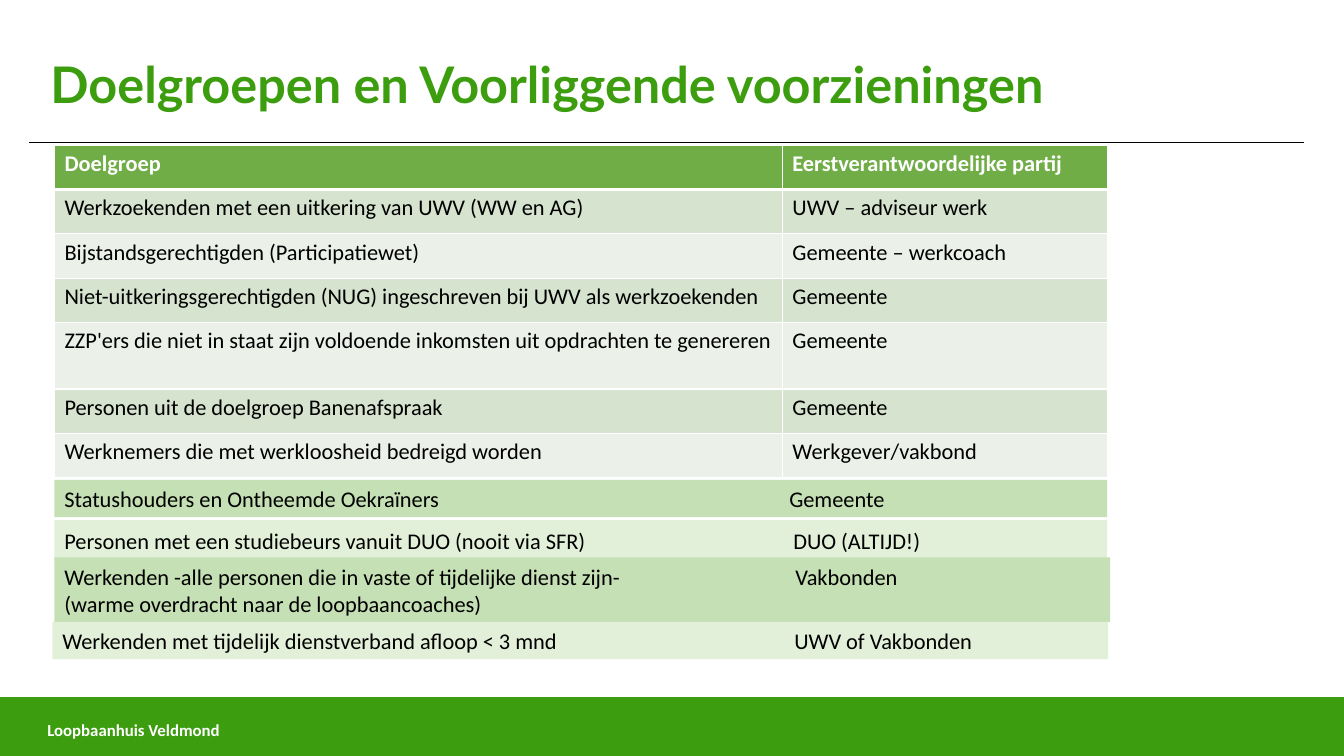
from lxml.etree import SubElement
from pptx import Presentation
from pptx.dml.color import RGBColor
from pptx.enum.shapes import MSO_CONNECTOR, MSO_SHAPE
from pptx.enum.text import MSO_ANCHOR, MSO_AUTO_SIZE, PP_ALIGN
from pptx.oxml.ns import qn
from pptx.util import Inches, Pt

GREEN = RGBColor(0x3C, 0x9D, 0x0F)
HEADER_GREEN = RGBColor(0x70, 0xAD, 0x47)
ROW_DARK = RGBColor(0xD5, 0xE3, 0xCF)
ROW_LIGHT = RGBColor(0xEB, 0xF1, 0xE9)
BAND_DARK = RGBColor(0xC5, 0xE0, 0xB4)
BAND_LIGHT = RGBColor(0xE2, 0xF0, 0xD9)
WHITE = RGBColor(0xFF, 0xFF, 0xFF)
BLACK = RGBColor(0x00, 0x00, 0x00)

COLUMN_WIDTHS = (7.22, 3.23)
TABLE_ROWS = (
    ("Doelgroep", "Eerstverantwoordelijke partij", 0.44),
    ("Werkzoekenden met een uitkering van UWV (WW en AG)", "UWV – adviseur werk", 0.44),
    ("Bijstandsgerechtigden (Participatiewet)", "Gemeente – werkcoach", 0.44),
    ("Niet-uitkeringsgerechtigden (NUG) ingeschreven bij UWV als werkzoekenden", "Gemeente", 0.44),
    ("ZZP'ers die niet in staat zijn voldoende inkomsten uit opdrachten te genereren", "Gemeente", 0.66),
    ("Personen uit de doelgroep Banenafspraak", "Gemeente", 0.44),
    ("Werknemers die met werkloosheid bedreigd worden", "Werkgever/vakbond", 0.44),
)
BANDS = (
    ((0.54, 4.76, 10.44, 0.37), BAND_DARK, 7.19,
     ["Statushouders en Ontheemde Oekraïners\tGemeente"]),
    ((0.54, 5.16, 10.44, 0.4), BAND_LIGHT, 7.23,
     ["Personen met een studiebeurs vanuit DUO (nooit via SFR)\tDUO (ALTIJD!)"]),
    ((0.54, 5.53, 10.47, 0.64), BAND_DARK, 7.25,
     ["Werkenden -alle personen die in vaste of tijdelijke dienst zijn-\tVakbonden",
      "(warme overdracht naar de loopbaancoaches)"]),
    ((0.52, 6.17, 10.47, 0.37), BAND_LIGHT, 7.26,
     ["Werkenden met tijdelijk dienstverband afloop < 3 mnd\tUWV of Vakbonden"]),
)


def write_text(paragraph, text, size=16, font="Calibri", color=BLACK, bold=False):
    paragraph.alignment = PP_ALIGN.LEFT
    run = paragraph.add_run()
    run.text = text
    run.font.size = Pt(size)
    run.font.name = font
    run.font.color.rgb = color
    run.font.bold = bold


def add_title(slide, text):
    title = slide.shapes.title
    title.left, title.top = Inches(0.4), Inches(0.14)
    title.width, title.height = Inches(11.5), Inches(1.45)
    frame = title.text_frame
    frame.auto_size = MSO_AUTO_SIZE.NONE
    frame.vertical_anchor = MSO_ANCHOR.MIDDLE
    paragraph = frame.paragraphs[0]
    paragraph.line_spacing = 0.9
    write_text(paragraph, text, size=36, font="Lato", color=GREEN, bold=True)


def add_rectangle(slide, box, color):
    shape = slide.shapes.add_shape(MSO_SHAPE.RECTANGLE, *map(Inches, box))
    shape.shadow.inherit = False
    shape.fill.solid()
    shape.fill.fore_color.rgb = color
    shape.line.fill.background()
    return shape


def add_footer(slide, text):
    bar = add_rectangle(slide, (0, 6.92, 13.33, 0.58), GREEN)
    bar.line.color.rgb = GREEN
    bar.line.width = Pt(1)
    label = slide.shapes.add_textbox(Inches(0.47), Inches(7.14), Inches(5.25), Inches(0.22))
    frame = label.text_frame
    frame.word_wrap = True
    frame.margin_left = frame.margin_top = frame.margin_right = frame.margin_bottom = 0
    frame.paragraphs[0].space_after = Pt(6)
    write_text(frame.paragraphs[0], text, size=12, color=WHITE, bold=True)


def add_rule(slide):
    rule = slide.shapes.add_connector(
        MSO_CONNECTOR.STRAIGHT, Inches(0.29), Inches(1.41), Inches(12.93), Inches(1.41))
    rule.line.color.rgb = BLACK
    rule.line.width = Pt(0.5)
    SubElement(rule._element.spPr, qn("a:effectLst"))


def set_borders(cell, **widths):
    properties = cell._tc.get_or_add_tcPr()
    for side in ("L", "R", "T", "B"):
        line = SubElement(properties, qn(f"a:ln{side}"), w=str(Pt(widths.get(side, 1))))
        fill = SubElement(line, qn("a:solidFill"))
        SubElement(fill, qn("a:srgbClr"), val=str(WHITE))


def add_target_table(slide):
    height = sum(row[-1] for row in TABLE_ROWS)
    table = slide.shapes.add_table(
        len(TABLE_ROWS), len(COLUMN_WIDTHS), Inches(0.54), Inches(1.44),
        Inches(sum(COLUMN_WIDTHS)), Inches(height)).table
    for column, width in zip(table.columns, COLUMN_WIDTHS):
        column.width = Inches(width)
    for index, (*texts, row_height) in enumerate(TABLE_ROWS):
        header = index == 0
        table.rows[index].height = Inches(row_height)
        for column, text in enumerate(texts):
            cell = table.cell(index, column)
            set_borders(cell, T=3 if index == 1 else 1, B=3 if header else 1)
            cell.fill.solid()
            cell.fill.fore_color.rgb = HEADER_GREEN if header else (ROW_LIGHT, ROW_DARK)[index % 2]
            write_text(cell.text_frame.paragraphs[0], text,
                       color=WHITE if header else BLACK, bold=header)


def add_band(slide, box, color, tab, lines):
    frame = add_rectangle(slide, box, color).text_frame
    frame.word_wrap = True
    frame.vertical_anchor = MSO_ANCHOR.MIDDLE
    for index, line in enumerate(lines):
        paragraph = frame.add_paragraph() if index else frame.paragraphs[0]
        write_text(paragraph, line)
        tabs = SubElement(paragraph._p.get_or_add_pPr(), qn("a:tabLst"))
        SubElement(tabs, qn("a:tab"), pos=str(Inches(tab)), algn="l")


def main():
    presentation = Presentation()
    presentation.slide_width = Inches(13.33)
    presentation.slide_height = Inches(7.5)
    slide = presentation.slides.add_slide(presentation.slide_layouts[5])
    add_footer(slide, "Loopbaanhuis Veldmond")
    add_rule(slide)
    add_title(slide, "Doelgroepen en Voorliggende voorzieningen")
    add_target_table(slide)
    for band in BANDS:
        add_band(slide, *band)
    presentation.save("out.pptx")


if __name__ == "__main__":
    main()
